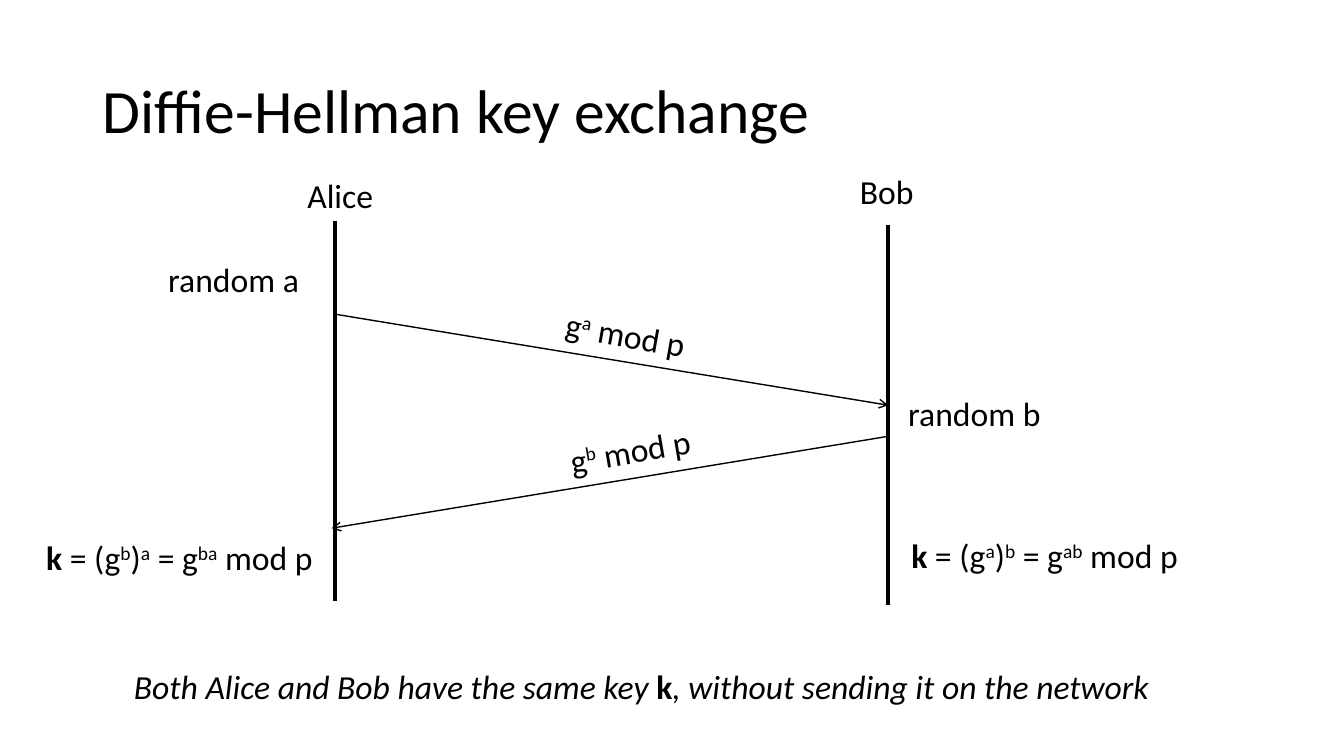
from lxml.etree import SubElement
from pptx import Presentation
from pptx.dml.color import RGBColor
from pptx.enum.shapes import MSO_CONNECTOR as Conn
from pptx.enum.text import MSO_ANCHOR as Anchor, PP_ALIGN as Align
from pptx.oxml.ns import qn
from pptx.util import Pt

PX = 9144  # 100 px to the inch
BLACK = RGBColor(0, 0, 0)
FONT = "Calibri"
ROW = 50


def add_run(para, text, style="", size=24):
    """Style holds any of b (bold), i (italic) and ^ (superscript)."""
    run = para.add_run()
    run.text = text
    font = run.font
    font.name, font.size = FONT, Pt(size)
    font.color.rgb = BLACK
    font.bold, font.italic = "b" in style, "i" in style
    if "^" in style:
        run._r.get_or_add_rPr().set("baseline", "30000")


def place(shape, left, top, width, height):
    shape.left, shape.top = left * PX, top * PX
    shape.width, shape.height = width * PX, height * PX


def add_title(slide, text):
    title = slide.shapes.title
    place(title, 92, 40, 1150, 145)
    frame = title.text_frame
    frame.vertical_anchor = Anchor.MIDDLE
    para = frame.paragraphs[0]
    para.alignment, para.line_spacing = Align.LEFT, 0.9
    add_run(para, text, size=44)


def add_label(slide, left, top, width, runs, turn=0, wrap=False):
    box = slide.shapes.add_textbox(left * PX, top * PX, width * PX, ROW * PX)
    box.rotation = turn
    box.text_frame.word_wrap = wrap
    for run in runs:
        add_run(box.text_frame.paragraphs[0], *run)


def add_line(slide, start, end, weight, arrow=False):
    ends = [n * PX for n in (*start, *end)]
    line = slide.shapes.add_connector(Conn.STRAIGHT, *ends)
    line.line.color.rgb = BLACK
    line.line.width = Pt(weight)
    if arrow:
        SubElement(line.line._get_or_add_ln(), qn("a:tailEnd"), type="arrow")
    SubElement(line._element.spPr, qn("a:effectLst"))


def power(exp):
    return [("g",), (exp, "^"), (" mod p",)]


def shared_key(first, own):
    """Runs for the key made from the other side's exponent and one's own."""
    return [("k", "b"), (" = (g",), (first, "^"), (")",), (own, "^"),
            (" = ",), *power(first + own)]


def main():
    deck = Presentation()
    deck.slide_width, deck.slide_height = 1333 * PX, 750 * PX
    slide = deck.slides.add_slide(deck.slide_layouts[5])

    add_title(slide, "Diffie-Hellman key exchange")
    add_label(slide, 123, 656, 1106, [
        ("Both Alice and Bob have the same key ", "i"),
        ("k", "b"),
        (", without sending it on the network", "i"),
    ], wrap=True)

    for x, top in ((332, 219), (881, 223)):
        add_line(slide, (x, top), (x, top + 377), 3)

    for left, top, width, text in (
        (295, 169, 86, "Alice"),
        (843, 165, 74, "Bob"),
        (157, 252, 152, "random a"),
        (891, 385, 153, "random b"),
    ):
        add_label(slide, left, top, width, [(text,)])

    add_label(slide, 894, 526, 293, shared_key("a", "b"))
    add_label(slide, 36, 528, 293, shared_key("b", "a"))

    for exp, start, end, left, top, turn in (
        ("a", (334, 312), (881, 402), 551, 307, 10.1),
        ("b", (880, 433), (329, 524), 555, 422, 350.3),
    ):
        add_line(slide, start, end, 1, arrow=True)
        add_label(slide, left, top, 142, power(exp), turn)

    deck.save("out.pptx")


if __name__ == "__main__":
    main()
